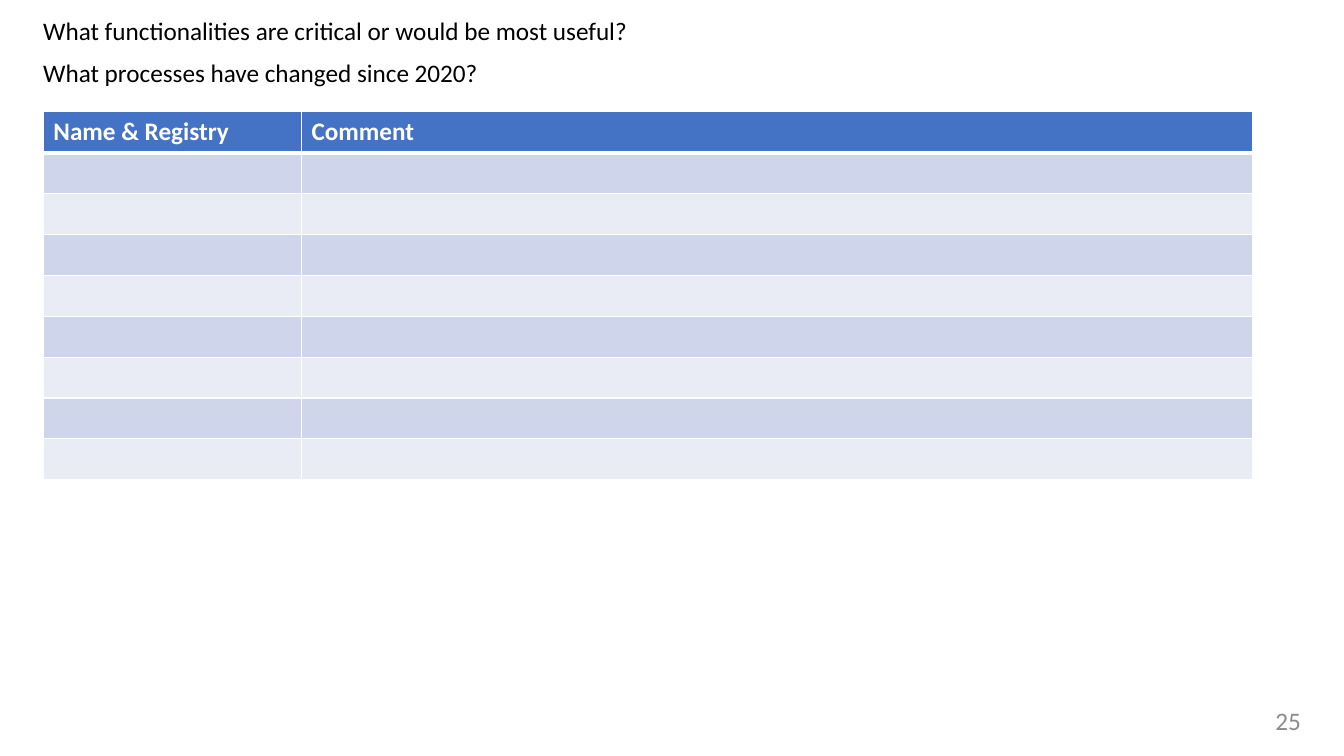
from lxml import etree
from pptx import Presentation
from pptx import util as u
from pptx.dml.color import RGBColor
from pptx.enum import text
from pptx.oxml import ns

SLIDE_W, SLIDE_H = 13.33, 7.5
FONT = "Calibri"
WHITE, HEADER_BLUE = "FFFFFF", "4472C4"
BANDS = ["CFD5EA", "E9EBF5"]
QUESTIONS = [
    "What functionalities are critical or would be most useful?",
    "What processes have changed since 2020?",
]
HEADINGS = ["Name & Registry", "Comment"]
COLUMN_WIDTHS = [2.56, 9.43]
ROW_COUNT = 9


def color(hex_string):
    """Return the colour for a hex string."""
    return RGBColor.from_string(hex_string)


def inches(box):
    """Convert a box of left, top, width and height to lengths."""
    return [u.Inches(length) for length in box]


def add_run(paragraph, words, hex_string, bold=False):
    """Add one formatted run to a paragraph."""
    run = paragraph.add_run()
    run.text = words
    run.font.name = FONT
    run.font.size = u.Pt(18)
    run.font.bold = bold
    run.font.color.rgb = color(hex_string)


def add_border(cell, side, position, points):
    """Draw a white border on one side of a cell."""
    line = etree.Element(ns.qn(f"a:ln{side}"), w=str(u.Pt(points)))
    fill = etree.SubElement(line, ns.qn("a:solidFill"))
    etree.SubElement(fill, ns.qn("a:srgbClr"), val=WHITE)
    cell._tc.get_or_add_tcPr().insert(position, line)


def add_questions(slide, box):
    """Place the discussion questions above the table."""
    frame = slide.shapes.add_textbox(*inches(box)).text_frame
    frame.word_wrap = True
    for index, question in enumerate(QUESTIONS):
        paragraph = frame.add_paragraph() if index else frame.paragraphs[0]
        paragraph.line_spacing = 0.9
        paragraph.space_before = u.Pt(10)
        add_run(paragraph, question, "000000")


def add_comment_table(slide, box):
    """Place the banded table for registry comments."""
    table = slide.shapes.add_table(ROW_COUNT, len(HEADINGS), *inches(box)).table
    for column, width in zip(table.columns, COLUMN_WIDTHS):
        column.width = u.Inches(width)
    for row_index, row in enumerate(table.rows):
        row.height = u.Inches(box[3] / ROW_COUNT)
        is_header = row_index == 0
        weights = {"L": 1, "R": 1, "T": 3 if row_index == 1 else 1, "B": 3 if is_header else 1}
        for cell, heading in zip(row.cells, HEADINGS):
            cell.fill.solid()
            cell.fill.fore_color.rgb = color(HEADER_BLUE if is_header else BANDS[(row_index - 1) % 2])
            for position, (side, points) in enumerate(weights.items()):
                add_border(cell, side, position, points)
            if is_header:
                add_run(cell.text_frame.paragraphs[0], heading, WHITE, bold=True)


def add_page_number(slide, box):
    """Place the page number in the bottom right corner."""
    frame = slide.shapes.add_textbox(*inches(box)).text_frame
    frame.word_wrap = True
    frame.vertical_anchor = text.MSO_ANCHOR.MIDDLE
    paragraph = frame.paragraphs[0]
    paragraph.alignment = text.PP_ALIGN.RIGHT
    add_run(paragraph, "25", "8C8C8C")


def main():
    """Build and save the slide."""
    deck = Presentation()
    deck.slide_width, deck.slide_height = u.Inches(SLIDE_W), u.Inches(SLIDE_H)
    slide = deck.slides.add_slide(deck.slide_layouts[6])
    add_comment_table(slide, (0.43, 1.11, sum(COLUMN_WIDTHS), 3.65))
    add_page_number(slide, (12.42, 6.95, 0.58, 0.4))
    add_questions(slide, (0.33, 0.14, 12.49, 0.88))
    deck.save("out.pptx")


if __name__ == "__main__":
    main()
